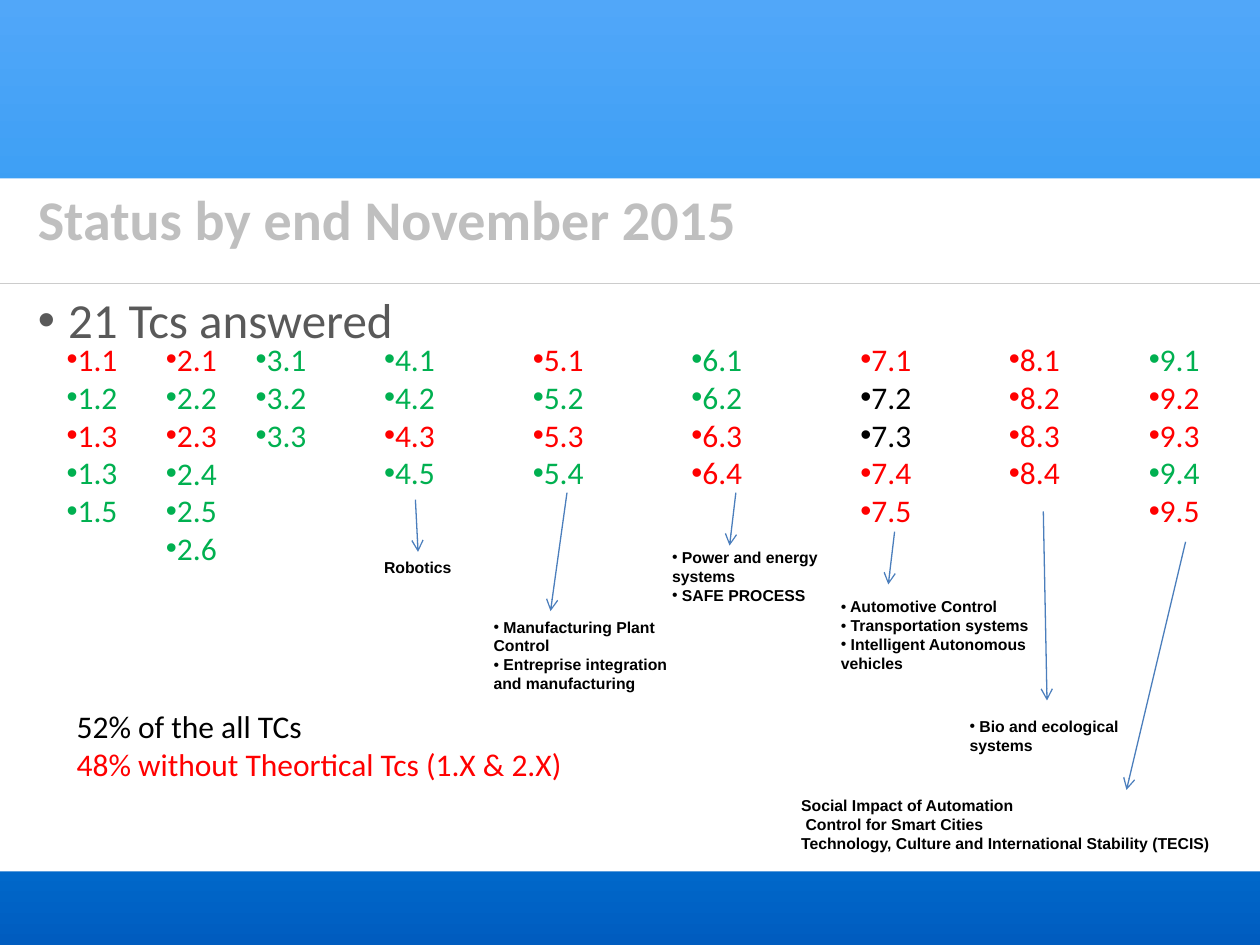
from copy import deepcopy

from pptx import Presentation
from pptx.dml.color import RGBColor
from pptx.enum.shapes import MSO_CONNECTOR, MSO_SHAPE
from pptx.enum.text import MSO_ANCHOR, MSO_AUTO_SIZE, PP_ALIGN
from pptx.oxml.ns import qn
from pptx.util import Pt
from lxml import etree

LINE, RECT = MSO_CONNECTOR.STRAIGHT, MSO_SHAPE.RECTANGLE
TOP, LEFT = MSO_ANCHOR.TOP, PP_ALIGN.LEFT
GROW = MSO_AUTO_SIZE.SHAPE_TO_FIT_TEXT
TITLE_ONLY = 5

RED, GREEN, BLACK, WHITE = "FF0000", "00B050", "000000", "FFFFFF"
TINTS = {"r": RED, "g": GREEN, "k": BLACK}
SKY = [(0, "51A7F9"), (0.75, "0087E6"), (1, "005CBF")]

HEAD = {"name": "Calibri", "size": Pt(32), "bold": True}
LEAD = {"name": "Calibri", "size": Pt(28), "bold": False}
CODE = {"name": "Calibri", "size": Pt(18), "bold": False}
NOTE = {"name": "Arial", "size": Pt(9), "bold": True}


def rgb(text):
    return RGBColor.from_string(text)


class Deck:
    def __init__(self, wide, high):
        self.prs = Presentation()
        self.prs.slide_width, self.prs.slide_height = Pt(wide), Pt(high)
        layout = self.prs.slide_layouts[TITLE_ONLY]
        self.slide = self.prs.slides.add_slide(layout)
        self.shapes = self.slide.shapes

    def sky(self, stops):
        fill = self.slide.background.fill
        fill.gradient()
        fill.gradient_angle = 270
        group = self.slide.element.find(".//" + qn("a:gsLst"))
        for _ in range(len(stops) - len(group)):
            group.append(deepcopy(group[0]))
        for stop, (place, tint) in zip(fill.gradient_stops, stops):
            stop.position = place
            stop.color.rgb = rgb(tint)

    def put(self, shape, rows, style, bullet=False, hang=0):
        """Fill a shape with rows of (text, colour)."""
        frame = shape.text_frame
        frame.vertical_anchor = TOP
        for i, (text, tint) in enumerate(rows):
            para = frame.paragraphs[0] if i == 0 else frame.add_paragraph()
            para.alignment = LEFT
            if bullet:
                props = para._p.get_or_add_pPr()
                props.set("marL", str(Pt(hang)))
                props.set("indent", str(-Pt(hang)))
                etree.SubElement(props, qn("a:buFont")).set("typeface", "Arial")
                etree.SubElement(props, qn("a:buChar")).set("char", "•")
            run = para.add_run()
            run.text = text
            for key, value in style.items():
                setattr(run.font, key, value)
            run.font.color.rgb = rgb(tint)

    def panel(self, shape, rows, style, **marks):
        shape.fill.solid()
        shape.fill.fore_color.rgb = rgb(WHITE)
        shape.text_frame.word_wrap = True
        shape.text_frame.margin_left = Pt(21.6)
        self.put(shape, rows, style, **marks)

    def title(self, x, y, w, h, text, tint):
        shape = self.shapes.title
        shape.left, shape.top, shape.width, shape.height = map(Pt, (x, y, w, h))
        self.panel(shape, [(text, tint)], HEAD)

    def body(self, x, y, w, h, text, tint):
        shape = self.shapes.add_shape(RECT, *map(Pt, (x, y, w, h)))
        shape.shadow.inherit = False
        shape.line.fill.background()
        self.panel(shape, [(text, tint)], LEAD, bullet=True, hang=17.3)

    def text(self, x, y, w, rows, style, bullet=False, wrap=True):
        high = 7.2 + style["size"].pt * 1.215 * len(rows)
        box = self.shapes.add_textbox(*map(Pt, (x, y, w, high)))
        box.text_frame.word_wrap = wrap
        box.text_frame.auto_size = GROW
        self.put(box, rows, style, bullet)
        return box

    def line(self, ends, tint, width, arrow=False):
        link = self.shapes.add_connector(LINE, *map(Pt, ends))
        link.line.color.rgb = rgb(tint)
        link.line.width = Pt(width)
        props = link._element.spPr
        if arrow:
            tail = etree.SubElement(props.find(qn("a:ln")), qn("a:tailEnd"))
            tail.set("type", "arrow")
        etree.SubElement(props, qn("a:effectLst"))
        return link

    def arrow(self, *ends):
        return self.line(ends, "4B7EBC", 0.75, arrow=True)


def main():
    deck = Deck(720, 540)
    deck.sky(SKY)

    # Title and body panels with the rule between them
    deck.title(0, 102, 720, 60, "Status by end November 2015", "BFBFBF")
    deck.body(0, 162, 720, 336, "21 Tcs answered", "595959")
    deck.line((0, 162, 720, 162), "CCCCCC", 0.5)

    # Committee columns: left, width, numbers and their status colours
    groups = [
        (31, 50, "1.1 1.2 1.3 1.3 1.5", "rgrgg"),
        (87.8, 50, "2.1 2.2 2.3 2.4 2.5 2.6", "rgrggg"),
        (139, 50, "3.1 3.2 3.3", "ggg"),
        (212.4, 50, "4.1 4.2 4.3 4.5", "ggrg"),
        (297.4, 50, "5.1 5.2 5.3 5.4", "rgrg"),
        (388, 61, "6.1 6.2 6.3 6.4", "ggrr"),
        (484.6, 50, "7.1 7.2 7.3 7.4 7.5", "rkkrr"),
        (569.5, 50, "8.1 8.2 8.3 8.4", "rrrr"),
        (649.4, 55, "9.1 9.2 9.3 9.4 9.5", "grrgr"),
    ]
    lists = []
    for x, wide, codes, marks in groups:
        rows = [(code, TINTS[mark]) for code, mark in zip(codes.split(), marks)]
        lists.append(deck.text(x, 190.8, wide, rows, CODE, bullet=True))

    # Topic notes: left, top, width, bulleted, lines
    topics = [
        (212.4, 315.4, 53, False, ["Robotics"]),
        (275, 349.2, 130, True, [" Manufacturing Plant Control",
                                 " Entreprise integration and manufacturing"]),
        (377, 309.6, 130, True, [" Power and energy systems", " SAFE PROCESS"]),
        (473.4, 337.7, 130, True, [" Automotive Control",
                                   " Transportation systems",
                                   " Intelligent Autonomous vehicles"]),
        (547, 406, 130, True, [" Bio and ecological systems"]),
        (450.7, 451.4, 251, False, [
            "Social Impact of Automation",
            " Control for Smart Cities",
            "Technology, Culture and International Stability (TECIS)"]),
    ]
    notes = []
    for x, y, wide, bullet, lines in topics:
        rows = [(text, BLACK) for text in lines]
        notes.append(deck.text(x, y, wide, rows, NOTE, bullet, wrap=bullet))

    # Arrows from columns to notes
    link = deck.arrow(237.6, 285, 239, 315.4)
    link.begin_connect(lists[3], 2)
    link.end_connect(notes[0], 0)
    for ends in [(324, 281.5, 314.6, 349.2), (420.5, 281.5, 416.9, 311.8),
                 (511.2, 303.8, 507.6, 334), (596.2, 292.3, 598.3, 400.3),
                 (677.5, 309.6, 643.7, 451.4)]:
        deck.arrow(*ends)

    # Summary
    deck.text(36.7, 400.3, 295, [
        ("52% of the all TCs", BLACK),
        ("48% without Theortical Tcs (1.X & 2.X)", RED)], CODE, wrap=False)

    deck.prs.save("out.pptx")


if __name__ == "__main__":
    main()
